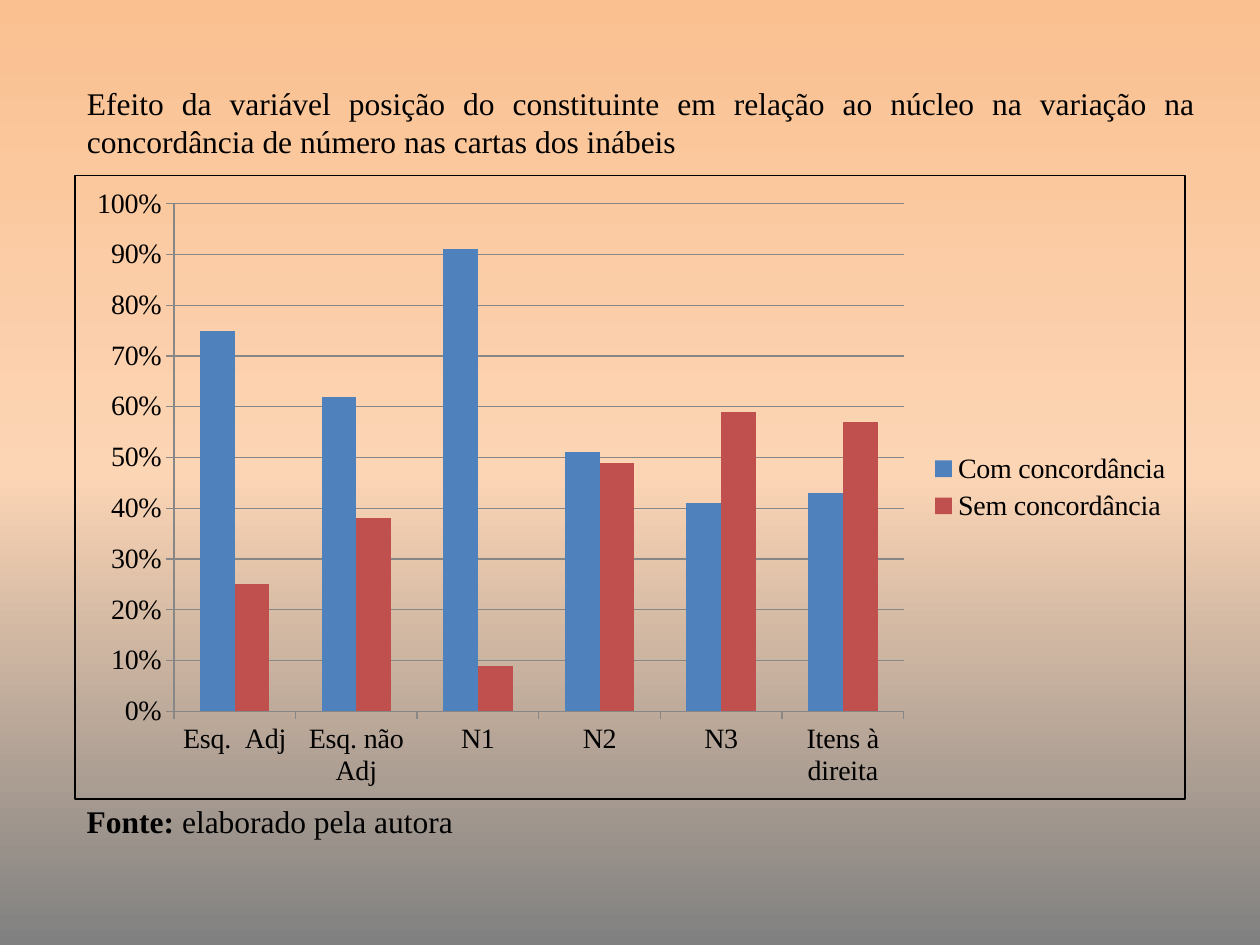
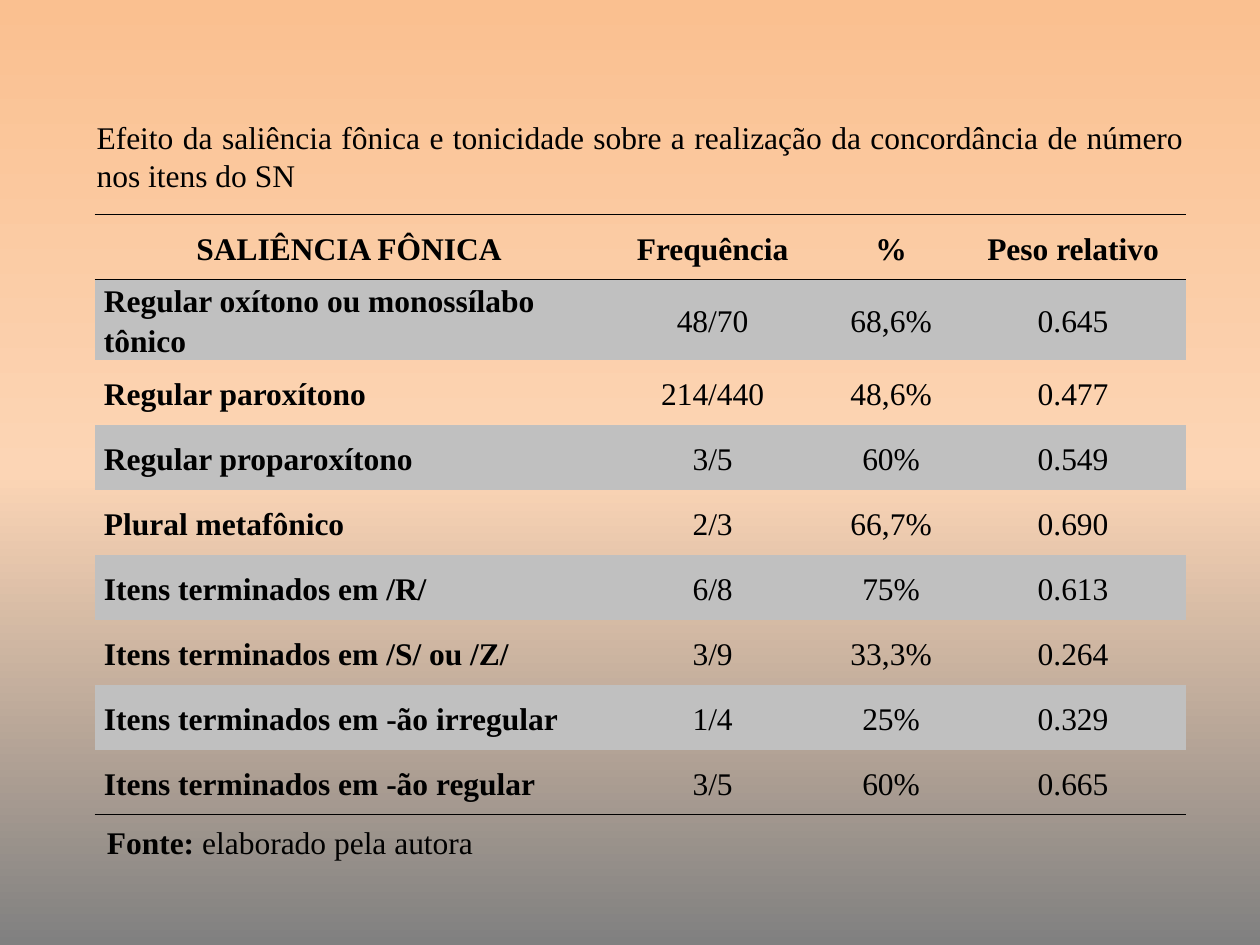
"""Builds two slides on number agreement: a column chart and a results table."""
from lxml import etree
from pptx import Presentation
from pptx.chart.data import CategoryChartData
from pptx.dml.color import RGBColor
from pptx.enum.chart import XL_CHART_TYPE, XL_LEGEND_POSITION, XL_TICK_MARK
from pptx.enum.text import MSO_ANCHOR, MSO_AUTO_SIZE, PP_ALIGN
from pptx.oxml import parse_xml
from pptx.oxml.ns import nsdecls, qn
from pptx.util import Pt

LEFT, CENTER, JUSTIFY = PP_ALIGN.LEFT, PP_ALIGN.CENTER, PP_ALIGN.JUSTIFY
MIDDLE, NO_FIT = MSO_ANCHOR.MIDDLE, MSO_AUTO_SIZE.NONE
COLUMNS, LEGEND_RIGHT = XL_CHART_TYPE.COLUMN_CLUSTERED, XL_LEGEND_POSITION.RIGHT
TICK_OUT = XL_TICK_MARK.OUTSIDE

FONT, BLACK, BAND, GRID = "Times New Roman", "000000", "C0C0C0", "878787"
BACKGROUND = [(0, "FAC090"), (50, "FCD5B5"), (100, "808080")]
NO_STYLE = "{2D5ABB26-0587-4C30-8999-92F81FD0307C}"
SOURCE = ("Fonte: ", "elaborado pela autora")

CHART = {
    "title": "Efeito da variável posição do constituinte em relação ao núcleo "
             "na variação na concordância de número nas cartas dos inábeis",
    "title_box": (42.5, 33, 648, 73),
    "box": (42.5, 100, 635, 357),
    "source_at": (42.5, 455),
    "categories": ["Esq.  Adj", "Esq. não Adj", "N1", "N2", "N3", "Itens à direita"],
    "series": [
        ("Com concordância", "4F81BD", [0.75, 0.62, 0.91, 0.51, 0.41, 0.43]),
        ("Sem concordância", "C0504D", [0.25, 0.38, 0.09, 0.49, 0.59, 0.57]),
    ],
}
TABLE = {
    "title": "Efeito da saliência fônica e tonicidade sobre a realização da "
             "concordância de número nos itens do SN",
    "title_box": (48, 44, 636, 90),
    "at": (54, 122.5),
    "source_at": (54, 467),
    "widths": [291, 124.5, 79.5, 128.5],
    "row_height": 37.15,
    "rows": [
        ("SALIÊNCIA FÔNICA", "Frequência", "%", "Peso relativo"),
        ("Regular oxítono ou monossílabo tônico", "48/70", "68,6%", "0.645"),
        ("Regular paroxítono", "214/440", "48,6%", "0.477"),
        ("Regular proparoxítono", "3/5", "60%", "0.549"),
        ("Plural metafônico", "2/3", "66,7%", "0.690"),
        ("Itens terminados em /R/", "6/8", "75%", "0.613"),
        ("Itens terminados em /S/ ou /Z/", "3/9", "33,3%", "0.264"),
        ("Itens terminados em -ão irregular", "1/4", "25%", "0.329"),
        ("Itens terminados em -ão regular", "3/5", "60%", "0.665"),
    ],
}


def color(value):
    return RGBColor.from_string(value)


def points(values):
    return [Pt(v) for v in values]


def style_font(font, size, bold=False):
    font.name, font.size, font.bold = FONT, Pt(size), bold
    font.color.rgb = color(BLACK)


def write(tf, *texts, size=18, bold=(False,), align=LEFT, spacing=None, before=0):
    p = tf.paragraphs[0]
    p.alignment, p.line_spacing, p.space_before = align, spacing, Pt(before)
    for text, strong in zip(texts, bold):
        r = p.add_run()
        r.text = text
        style_font(r.font, size, strong)


def line_xml(tag, width):
    return (f'<a:{tag} {nsdecls("a")} w="{Pt(width)}"><a:solidFill>'
            f'<a:srgbClr val="{BLACK}"/></a:solidFill></a:{tag}>')


def set_background(master):
    fill = master.background.fill
    fill.gradient()
    fill.gradient_angle = 270
    stops = master.element.find(".//" + qn("p:bg")).find(".//" + qn("a:gsLst"))
    for stop in list(stops):
        stops.remove(stop)
    for position, value in BACKGROUND:
        stop = etree.SubElement(stops, qn("a:gs"), pos=str(position * 1000))
        etree.SubElement(stop, qn("a:srgbClr"), val=value)


def add_slide(prs, content):
    s = prs.slides.add_slide(prs.slide_layouts[5])
    title = s.shapes.title
    title.left, title.top, title.width, title.height = points(content["title_box"])
    tf = title.text_frame
    tf.auto_size, tf.vertical_anchor = NO_FIT, MIDDLE
    write(tf, content["title"], align=JUSTIFY)
    return s


def add_source(s, at):
    tf = s.shapes.add_textbox(*points(at), Pt(648), Pt(39)).text_frame
    tf.word_wrap = True
    write(tf, *SOURCE, bold=(True, False), before=3.6)


def add_chart(s):
    data = CategoryChartData(number_format="0%")
    data.categories = CHART["categories"]
    for name, _, values in CHART["series"]:
        data.add_series(name, values)
    chart = s.shapes.add_chart(COLUMNS, *points(CHART["box"]), data).chart
    style_font(chart.font, 14)
    chart.has_title = False
    chart.has_legend = True
    chart.legend.position, chart.legend.include_in_layout = LEGEND_RIGHT, False
    style_font(chart.legend.font, 16)

    plot = chart.plots[0]
    plot.gap_width, plot.overlap, plot.vary_by_categories = 150, 0, False
    for series, (_, value, _) in zip(plot.series, CHART["series"]):
        series.format.fill.solid()
        series.format.fill.fore_color.rgb = color(value)

    axis = chart.value_axis
    axis.minimum_scale, axis.maximum_scale, axis.major_unit = 0, 1, 0.1
    axis.has_major_gridlines = True
    axis.tick_labels.number_format = "0%"
    axis.tick_labels.number_format_is_linked = False
    for ax in (chart.category_axis, axis):
        ax.major_tick_mark = TICK_OUT
        style_font(ax.tick_labels.font, 16)
    for part in (chart.category_axis, axis, axis.major_gridlines):
        part.format.line.color.rgb = color(GRID)
        part.format.line.width = Pt(0.75)

    border = parse_xml(f'<c:spPr {nsdecls("c", "a")}><a:noFill/>{line_xml("ln", 0.75)}</c:spPr>')
    chart.element.find(qn("c:txPr")).addprevious(border)


def add_table(s):
    rows, widths, height = TABLE["rows"], TABLE["widths"], TABLE["row_height"]
    frame = s.shapes.add_table(len(rows), len(widths), *points(TABLE["at"]),
                               Pt(sum(widths)), Pt(height * len(rows)))
    table = frame.table
    table.first_row = table.horz_banding = False
    frame.element.find(".//" + qn("a:tableStyleId")).text = NO_STYLE
    for column, width in zip(table.columns, widths):
        column.width = Pt(width)
    for i, values in enumerate(rows):
        table.rows[i].height = Pt(height)
        for j, text in enumerate(values):
            cell = table.cell(i, j)
            cell.vertical_anchor = MIDDLE
            cell.margin_left = cell.margin_right = Pt(5.4)
            cell.margin_top = cell.margin_bottom = 0
            write(cell.text_frame, text, bold=(i == 0 or j == 0,), spacing=1.15,
                  align=LEFT if i and j == 0 else CENTER)
            if i % 2:
                cell.fill.solid()
                cell.fill.fore_color.rgb = color(BAND)
            else:
                cell.fill.background()
            edges = {0: ("lnB", "lnT"), len(rows) - 1: ("lnB",)}.get(i, ())
            for edge in edges:
                cell.fill._xPr.insert(0, parse_xml(line_xml(edge, 1)))


def main():
    prs = Presentation()
    prs.slide_width, prs.slide_height = Pt(720), Pt(540)
    set_background(prs.slide_master)
    for content, add_content in ((CHART, add_chart), (TABLE, add_table)):
        s = add_slide(prs, content)
        add_content(s)
        add_source(s, content["source_at"])
    prs.save("out.pptx")


if __name__ == "__main__":
    main()
